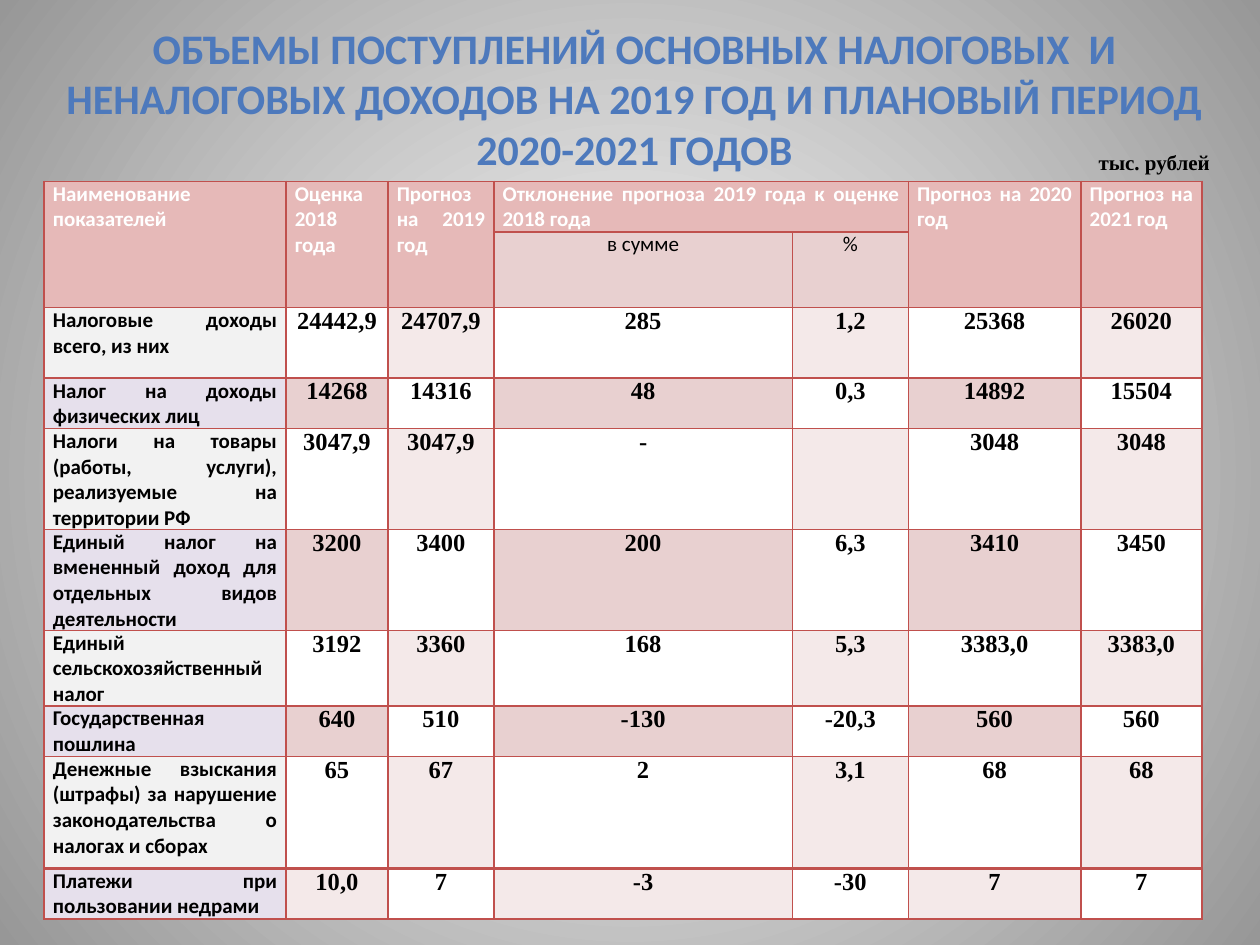
from dataclasses import dataclass

from lxml import etree
from pptx import Presentation
from pptx.dml.color import RGBColor
from pptx.enum.text import MSO_AUTO_SIZE, PP_ALIGN
from pptx.oxml.ns import qn
from pptx.util import Inches, Pt

LEFT, MID, JUST = PP_ALIGN.LEFT, PP_ALIGN.CENTER, PP_ALIGN.JUSTIFY
GROW = MSO_AUTO_SIZE.SHAPE_TO_FIT_TEXT
SANS, SERIF = "Calibri", "Times New Roman"
HUES = {
    "title": "4D79BC", "black": "000000", "white": "FFFFFF", "edge": "979797",
    "line": "C0504D", "head": "E6B9B8", "rose": "E8D0D0", "pale": "F4E9E9",
    "grey": "F2F2F2", "lilac": "E6E0EC",
}
COLS = [1.92, 0.81, 0.84, 2.37, 0.92, 1.37, 0.96]
ROWS = [0.26, 0.21, 0.56, 0.38, 0.79, 0.77, 0.57, 0.38, 0.89, 0.38]
HEADS = [
    ["Наименование показателей", "Оценка 2018 года", "Прогноз на 2019 год",
     "Отклонение прогноза 2019 года к оценке 2018 года", "",
     "Прогноз на 2020 год", "Прогноз на 2021 год"],
    ["", "", "", "в сумме", "%", "", ""],
]
DATA = [
    ["Налоговые доходы всего, из них",
     "24442,9", "24707,9", "285", "1,2", "25368", "26020"],
    ["Налог на доходы физических лиц",
     "14268", "14316", "48", "0,3", "14892", "15504"],
    ["Налоги на товары (работы, услуги), реализуемые на территории РФ",
     "3047,9", "3047,9", "-", "", "3048", "3048"],
    ["Единый налог на вмененный доход для отдельных видов деятельности",
     "3200", "3400", "200", "6,3", "3410", "3450"],
    ["Единый сельскохозяйственный налог",
     "3192", "3360", "168", "5,3", "3383,0", "3383,0"],
    ["Государственная пошлина",
     "640", "510", "-130", "-20,3", "560", "560"],
    ["Денежные взыскания (штрафы) за нарушение законодательства о налогах и сборах",
     "65", "67", "2", "3,1", "68", "68"],
    ["Платежи при пользовании недрами",
     "10,0", "7", "-3", "-30", "7", "7"],
]


@dataclass
class Style:
    font: str
    size: int
    hue: str
    align: PP_ALIGN
    bold: bool = True


@dataclass
class Label:
    text: str
    box: tuple[float, float, float, float]
    style: Style
    wrap: bool


HEAD = Style(SANS, 12, "white", JUST)
SUB = Style(SANS, 12, "black", MID, False)
NAME = Style(SANS, 12, "black", JUST)
VALUE = Style(SERIF, 14, "black", MID)
LABELS = [
    Label("ОБЪЕМЫ ПОСТУПЛЕНИЙ ОСНОВНЫХ НАЛОГОВЫХ  И НЕНАЛОГОВЫХ ДОХОДОВ "
          "НА 2019 ГОД И ПЛАНОВЫЙ ПЕРИОД 2020-2021 ГОДОВ",
          (0.35, 0.13, 9.37, 1.31), Style(SANS, 24, "title", MID), True),
    Label("тыс. рублей", (8.62, 1.14, 1.09, 0.3),
          Style(SERIF, 12, "black", LEFT), False),
]


def tint(key: str) -> RGBColor:
    return RGBColor.from_string(HUES[key])


def write(frame, text: str, style: Style) -> None:
    para = frame.paragraphs[0]
    para.alignment = style.align
    if not text:
        return
    run = para.add_run()
    run.text = text
    font = run.font
    font.name, font.size, font.bold = style.font, Pt(style.size), style.bold
    font.color.rgb = tint(style.hue)


def add_label(slide, label: Label) -> None:
    frame = slide.shapes.add_textbox(*map(Inches, label.box)).text_frame
    frame.word_wrap = label.wrap
    frame.auto_size = GROW
    write(frame, label.text, label.style)


def paint_back(slide) -> None:
    fill = slide.background.fill
    fill.gradient()
    for stop, key, place in zip(fill.gradient_stops, ("white", "edge"), (0, 1)):
        stop.color.rgb = tint(key)
        stop.position = place
    grad = slide.element.find(".//" + qn("a:gradFill"))
    grad.remove(grad.find(qn("a:lin")))
    ring = etree.SubElement(grad, qn("a:path"), {"path": "circle"})
    etree.SubElement(ring, qn("a:fillToRect"), dict.fromkeys("ltrb", "50000"))


def add_edges(cell, top: int) -> None:
    props = cell._tc.get_or_add_tcPr()
    for side, width in zip("LRTB", (1, 1, top, 1)):
        line = etree.SubElement(props, qn("a:ln" + side), {"w": str(Pt(width))})
        solid = etree.SubElement(line, qn("a:solidFill"))
        etree.SubElement(solid, qn("a:srgbClr"), {"val": HUES["line"]})


def pick(row: int, col: int) -> tuple[str, Style]:
    if row < len(HEADS):
        return ("rose", SUB) if row == 1 and col in (3, 4) else ("head", HEAD)
    if col == 0:
        return ("lilac" if row % 2 else "grey"), NAME
    if (row + col) % 2:
        return "white", VALUE
    strong = row % 2 and row < len(ROWS) - 1
    return ("rose" if strong else "pale"), VALUE


def add_grid(slide) -> None:
    box = map(Inches, (0.35, 1.44, 9.19, 5.46))
    shape = slide.shapes.add_table(len(ROWS), len(COLS), *box)
    table = shape.table
    table.first_row = table.horz_banding = False
    for col, width in zip(table.columns, COLS):
        col.width = Inches(width)
    for row, height in zip(table.rows, ROWS):
        row.height = Inches(height)
    shape.height = Inches(5.46)
    for r, texts in enumerate(HEADS + DATA):
        for c, text in enumerate(texts):
            cell = table.cell(r, c)
            key, style = pick(r, c)
            cell.margin_left = cell.margin_right = Inches(0.07)
            cell.margin_top = cell.margin_bottom = 0
            add_edges(cell, 2 if r == len(ROWS) - 1 else 1)
            cell.fill.solid()
            cell.fill.fore_color.rgb = tint(key)
            write(cell.text_frame, text, style)
    for c in (0, 1, 2, 5, 6):
        table.cell(0, c).merge(table.cell(1, c))
    table.cell(0, 3).merge(table.cell(0, 4))


def main() -> None:
    deck = Presentation()
    deck.slide_width, deck.slide_height = Inches(10), Inches(7.5)
    slide = deck.slides.add_slide(deck.slide_layouts[6])
    paint_back(slide)
    for label in LABELS:
        add_label(slide, label)
    add_grid(slide)
    deck.save("out.pptx")


if __name__ == "__main__":
    main()
